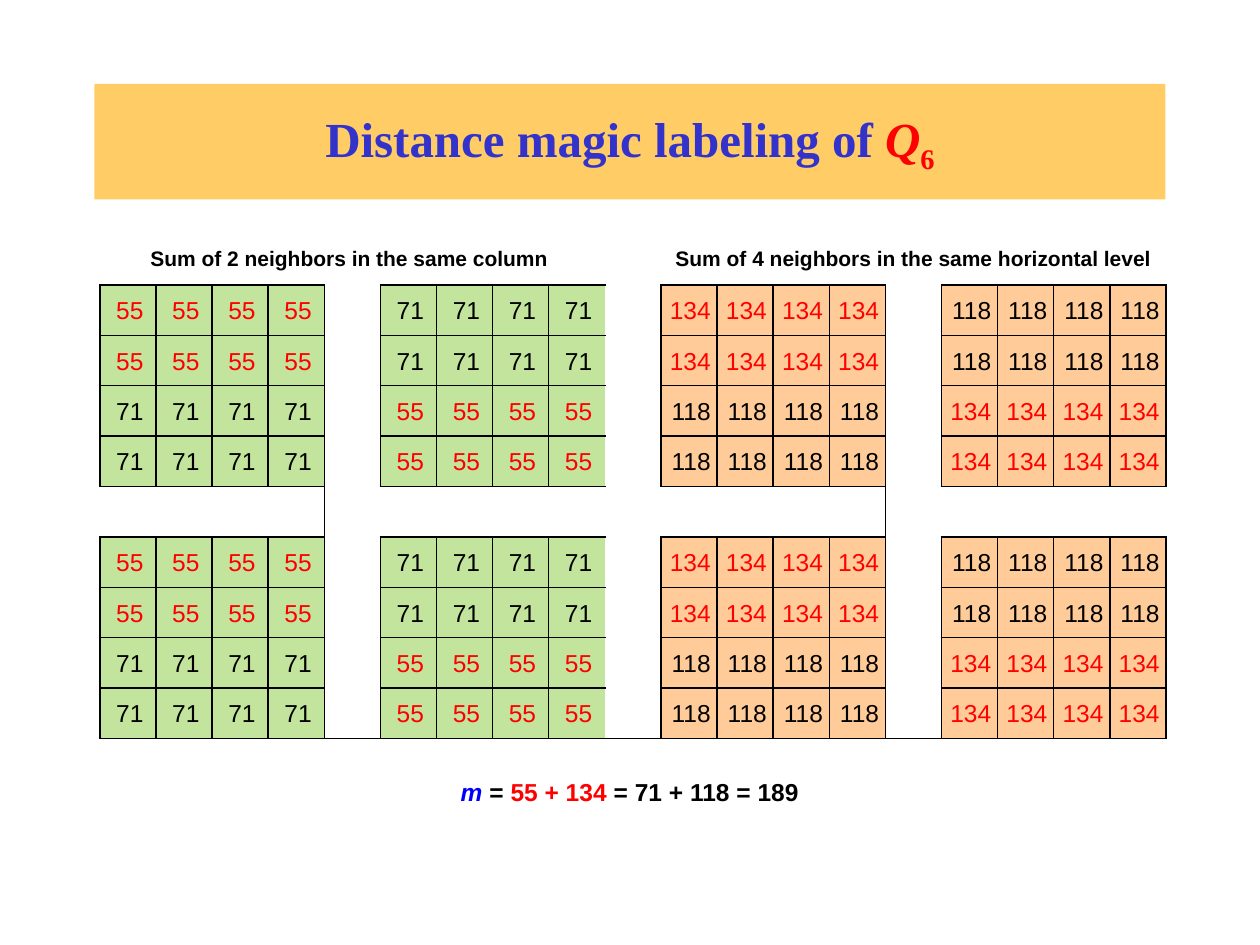
from dataclasses import dataclass
from itertools import product

from lxml import etree
from pptx import Presentation
from pptx import util as u
from pptx.dml.color import RGBColor
from pptx.enum import shapes, text
from pptx.oxml.ns import qn

PLAIN_STYLE = "{2D5ABB26-0587-4C30-8999-92F81FD0307C}"
BLOCK_SIZE = 4
BLOCK_STEP = BLOCK_SIZE + 1
ROWS, COLUMNS = 11, 19


@dataclass(frozen=True)
class Theme:
    title_fill: str = "FFCC66"
    title: str = "3333CC"
    red: str = "FF0000"
    black: str = "000000"
    blue: str = "0000FF"
    white: str = "FFFFFF"
    green: str = "C2E49C"
    orange: str = "FFCC99"
    serif: str = "Times New Roman"
    sans: str = "Arial"
    title_size: float = 28
    heading_size: float = 12
    number_size: float = 14
    border: float = 1


@dataclass(frozen=True)
class Family:
    heading: str
    red_sum: int
    black_sum: int
    fill: str
    right_margin: float
    first_column: int


THEME = Theme()
FAMILIES = [
    Family("Sum of 2 neighbors in the same column", 55, 71, THEME.green, 7.2, 0),
    Family("Sum of 4 neighbors in the same horizontal level", 134, 118, THEME.orange, 3.6, 10),
]


def add_text(paragraph, content: str, *, size: float, color: str = THEME.black,
             font: str = THEME.sans, bold: bool = False, italic: bool = False,
             baseline: int = 0, align=text.PP_ALIGN.CENTER) -> None:
    paragraph.alignment = align
    run = paragraph.add_run()
    run.text = content
    run.font.size = u.Pt(size)
    run.font.name = font
    run.font.bold = bold
    run.font.italic = italic
    run.font.color.rgb = RGBColor.from_string(color)
    if baseline:
        run._r.get_or_add_rPr().set("baseline", str(baseline))


def set_borders(cell, sides: str) -> None:
    properties = cell._tc.get_or_add_tcPr()
    for index, side in enumerate("LRTB"):
        line = etree.Element(qn(f"a:ln{side}"), w=str(u.Pt(THEME.border)))
        if side in sides:
            fill = etree.SubElement(line, qn("a:solidFill"))
            etree.SubElement(fill, qn("a:srgbClr"), val=THEME.black)
        else:
            etree.SubElement(line, qn("a:noFill"))
        properties.insert(index, line)


def format_cell(cell, *, sides: str = "", fill: str = "", top: float = 0,
                right: float = 0, bottom: float = 0, left: float = 0):
    cell.margin_left, cell.margin_top = u.Pt(left), u.Pt(top)
    cell.margin_right, cell.margin_bottom = u.Pt(right), u.Pt(bottom)
    cell.vertical_anchor = text.MSO_ANCHOR.TOP
    if fill:
        cell.fill.solid()
        cell.fill.fore_color.rgb = RGBColor.from_string(fill)
    else:
        cell.fill.background()
    set_borders(cell, sides)
    return cell.text_frame.paragraphs[0]


def merge(table, row: int, column: int, height: int, width: int):
    cell = table.cell(row, column)
    cell.merge(table.cell(row + height - 1, column + width - 1))
    return cell


def add_title(slide) -> None:
    shape = slide.shapes.add_shape(
        shapes.MSO_SHAPE.RECTANGLE, u.Pt(54), u.Pt(48), u.Pt(612), u.Pt(66))
    shape.shadow.inherit = False
    shape.fill.solid()
    shape.fill.fore_color.rgb = RGBColor.from_string(THEME.title_fill)
    shape.line.fill.background()
    shape.text_frame.word_wrap = True
    shape.text_frame.vertical_anchor = text.MSO_ANCHOR.MIDDLE
    paragraph = shape.text_frame.paragraphs[0]
    style = dict(size=THEME.title_size, font=THEME.serif, bold=True)
    add_text(paragraph, "Distance magic labeling of ", color=THEME.title, **style)
    add_text(paragraph, "Q", color=THEME.red, italic=True, **style)
    add_text(paragraph, "6", color=THEME.red, baseline=-25000, **style)


def fill_family(table, family: Family) -> None:
    margins = dict(left=3.6, top=7.2, right=family.right_margin, bottom=3.6)
    heading = merge(table, 0, family.first_column, 1, 2 * BLOCK_SIZE + 1)
    add_text(format_cell(heading, sides="B", **margins), family.heading,
             size=THEME.heading_size, bold=True)
    for block_row, block_column in product(range(2), repeat=2):
        top = 1 + block_row * BLOCK_STEP
        left = family.first_column + block_column * BLOCK_STEP
        for row, column in product(range(BLOCK_SIZE), repeat=2):
            is_red = row // 2 == block_column
            cell = table.cell(top + row, left + column)
            add_text(format_cell(cell, sides="LRTB", fill=family.fill, **margins),
                     str(family.red_sum if is_red else family.black_sum),
                     size=THEME.number_size, align=text.PP_ALIGN.RIGHT,
                     color=THEME.red if is_red else THEME.black)


def add_sums_table(slide) -> None:
    column_width, row_height = 32.06, 28.8
    frame = slide.shapes.add_table(
        ROWS, COLUMNS, u.Pt(57.1), u.Pt(134),
        u.Pt(column_width * COLUMNS), u.Pt(row_height * ROWS))
    table = frame.table
    table.first_row = table.horz_banding = False
    table._tbl.tblPr.find(qn("a:tableStyleId")).text = PLAIN_STYLE
    for column in table.columns:
        column.width = u.Pt(column_width)
    for row in table.rows:
        row.height = u.Pt(row_height)

    for family in FAMILIES:
        fill_family(table, family)
    for column in (4, 14):
        format_cell(merge(table, 1, column, 9, 1), sides="LR")
    format_cell(merge(table, 0, 9, 10, 1))
    for column in range(0, COLUMNS, BLOCK_STEP):
        format_cell(merge(table, 5, column, 1, BLOCK_SIZE), sides="TB")

    footer = merge(table, ROWS - 1, 0, 1, COLUMNS)
    paragraph = format_cell(footer, sides="T", fill=THEME.white,
                            left=3.6, top=23.3, right=7.2, bottom=3.6)
    style = dict(size=THEME.number_size, bold=True)
    add_text(paragraph, "m ", color=THEME.blue, italic=True, **style)
    add_text(paragraph, "= ", **style)
    add_text(paragraph, "55 + 134", color=THEME.red, **style)
    add_text(paragraph, " = 71 + 118 = 189", **style)


def main() -> None:
    presentation = Presentation()
    presentation.slide_width, presentation.slide_height = u.Pt(720), u.Pt(540)
    slide = presentation.slides.add_slide(presentation.slide_layouts[6])
    add_title(slide)
    add_sums_table(slide)
    presentation.save("out.pptx")


if __name__ == "__main__":
    main()
